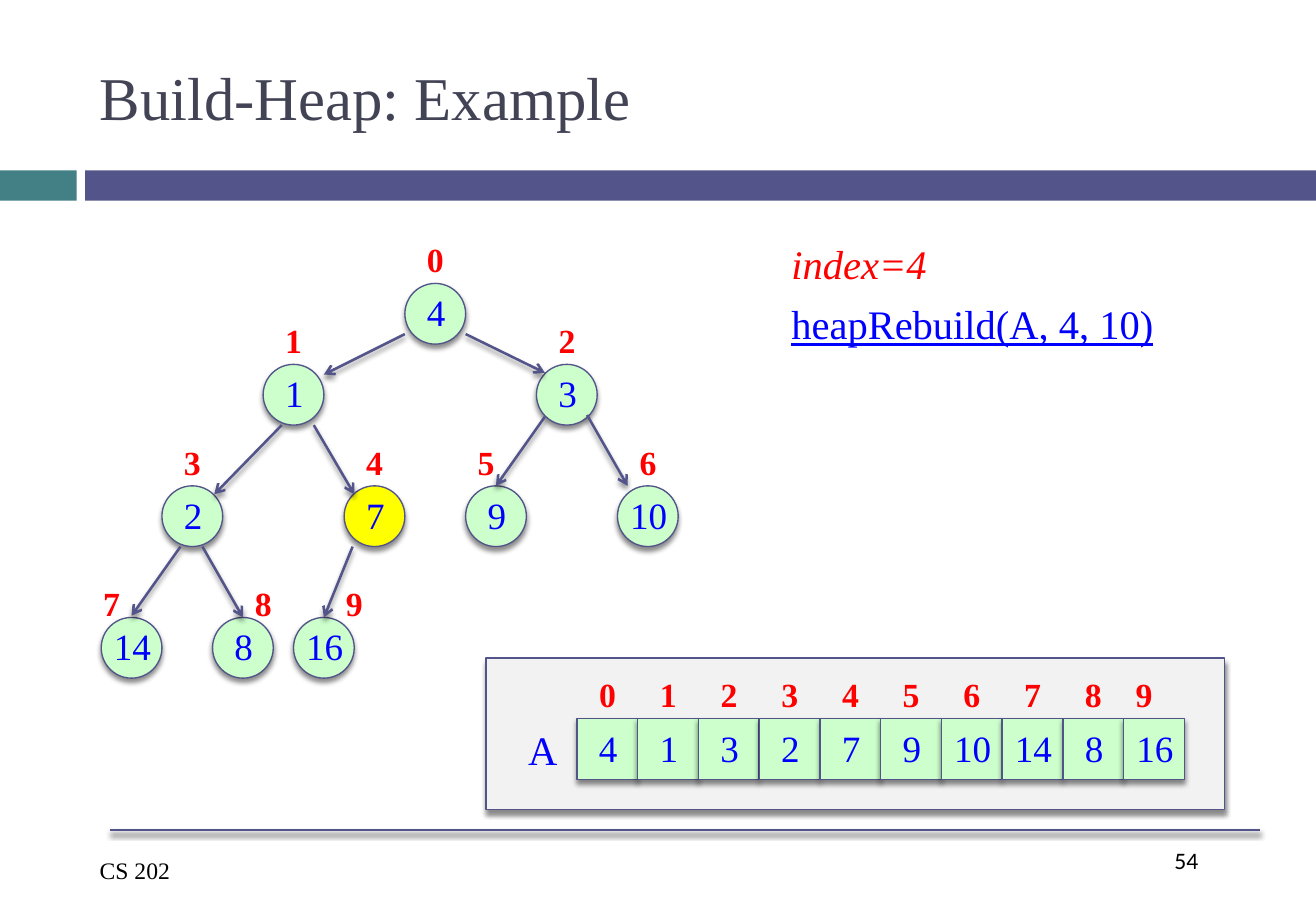
from pptx import Presentation
from pptx.dml.color import RGBColor
from pptx.enum.shapes import MSO_CONNECTOR, MSO_SHAPE
from pptx.enum.text import MSO_ANCHOR, PP_ALIGN
from pptx.oxml import parse_xml
from pptx.oxml.ns import nsdecls, qn
from pptx.util import Pt

SERIF = "Times New Roman"
INDIGO, TEAL, SLATE, GREY = "53548A", "438086", "424456", "F2F2F2"
GREEN, YELLOW, BLUE, RED, BLACK = "CCFFCC", "FFFF00", "0000FF", "FF0000", "000000"

VALUE = {"name": SERIF, "size": Pt(22)}
INDEX = {"name": SERIF, "size": Pt(20), "bold": True}
NOTE = {"name": SERIF, "size": Pt(24)}
TITLE = {"name": SERIF, "size": Pt(36)}
FOOTER = {"name": SERIF, "size": Pt(14)}
PAGE = {"name": "Calibri", "size": Pt(14)}

SIDE = 36
HEAP = [4, 1, 3, 2, 7, 9, 10, 14, 8, 16]
CURRENT = 4
NODES = [(180, 0), (96, 48), (258, 48), (36, 120), (144, 120),
         (216, 120), (306, 120), (0, 198), (66, 198), (114, 198)]
INDEX_OFFSETS = [(6, -30)] * 5 + [(0, -30), (6, -30), (-6, -24), (18, -24), (24, -24)]
EDGES = [(180, 30, 132, 54), (216, 30, 263, 53), (107, 84, 67, 125),
         (126, 84, 150, 125), (263, 79, 234, 120), (288, 78, 312, 120),
         (47, 156, 18, 197), (60, 156, 84, 198), (149, 156, 132, 198)]


def set_colour(fill, colour):
    fill.solid()
    fill.fore_color.rgb = RGBColor.from_string(colour)


def set_attributes(target, values):
    for name, value in values.items():
        setattr(target, name, value)


def cast_shadow(shape):
    shape._element.spPr.append(parse_xml(
        f'<a:effectLst {nsdecls("a")}>'
        '<a:outerShdw blurRad="38100" dist="30480" dir="5400000" rotWithShape="0">'
        '<a:srgbClr val="000000"><a:alpha val="45000"/></a:srgbClr>'
        '</a:outerShdw></a:effectLst>'))


def write(shape, text, style, colour):
    run = shape.text_frame.paragraphs[0].add_run()
    run.text = text
    set_attributes(run.font, style)
    set_colour(run.font.fill, colour)


def add_text(slide, box, text, style, colour, **frame):
    shape = slide.shapes.add_textbox(*map(Pt, box))
    set_attributes(shape.text_frame, {"word_wrap": True, **frame})
    write(shape, text, style, colour)


def add_index(slide, left, top, index):
    add_text(slide, (left, top, 24.5, 32), str(index), INDEX, RED, word_wrap=False)


def add_bar(slide, box, colour):
    bar = slide.shapes.add_shape(MSO_SHAPE.RECTANGLE, *map(Pt, box))
    set_colour(bar.fill, colour)
    bar.line.fill.background()
    bar.shadow.inherit = False


def add_raised(slide, kind, box, colour):
    shape = slide.shapes.add_shape(kind, *map(Pt, box))
    set_colour(shape.fill, colour)
    set_colour(shape.line.fill, INDIGO)
    shape.line.width = Pt(0.79)
    cast_shadow(shape)
    return shape


def add_value(slide, kind, left, top, value, colour=GREEN):
    shape = add_raised(slide, kind, (left, top, SIDE, SIDE), colour)
    set_attributes(shape.text_frame, {
        "margin_left": Pt(1), "margin_right": 0, "margin_top": 0, "margin_bottom": Pt(2),
        "word_wrap": False, "vertical_anchor": MSO_ANCHOR.MIDDLE})
    shape.text_frame.paragraphs[0].alignment = PP_ALIGN.CENTER
    write(shape, str(value), VALUE, BLUE)


def add_line(slide, ends, arrow=False):
    line = slide.shapes.add_connector(MSO_CONNECTOR.STRAIGHT, *map(Pt, ends))
    set_colour(line.line.fill, INDIGO)
    line.line.width = Pt(1.5)
    if arrow:
        outline = line._element.spPr.find(qn("a:ln"))
        outline.append(parse_xml(f'<a:tailEnd {nsdecls("a")} type="arrow"/>'))
    cast_shadow(line)


def add_frame(slide, width, height):
    add_bar(slide, (0, 101, 45.5, 18), TEAL)
    add_bar(slide, (50.5, 101, width - 50.5, 18), INDIGO)
    add_text(slide, (52, 18, 696, 78), "Build-Heap: Example", TITLE, SLATE,
             vertical_anchor=MSO_ANCHOR.MIDDLE)
    add_line(slide, (65, height - 48, width - 33, height - 48))
    add_text(slide, (52, height - 36, 143, 24.5), "CS 202", FOOTER, BLACK)
    add_text(slide, (689, height - 42, 58, 36), "54", PAGE, BLACK)


def add_tree(slide, left, top):
    for index, (value, (x, y)) in enumerate(zip(HEAP, NODES)):
        colour = YELLOW if index == CURRENT else GREEN
        add_value(slide, MSO_SHAPE.OVAL, left + x, top + y, value, colour)
    for x1, y1, x2, y2 in EDGES:
        add_line(slide, (left + x1, top + y1, left + x2, top + y2), arrow=True)
    for index, ((x, y), (dx, dy)) in enumerate(zip(NODES, INDEX_OFFSETS)):
        add_index(slide, left + x + dx, top + y + dy, index)


def add_array(slide, left, top, width, height):
    add_raised(slide, MSO_SHAPE.RECTANGLE, (left, top, width, height), GREY)
    add_text(slide, (left + 18, top + 36, 32, 36), "A", NOTE, BLUE, word_wrap=False)
    last = len(HEAP) - 1
    for index, value in enumerate(HEAP):
        x = left + 54 + index * SIDE
        add_value(slide, MSO_SHAPE.RECTANGLE, x, top + 36, value)
        add_index(slide, x if index == last else x + 6, top + 6, index)


def add_call(slide, left, top):
    add_text(slide, (left, top, 96, 36), "index=4", {**NOTE, "italic": True}, RED,
             word_wrap=False)
    add_text(slide, (left, top + 36, 231, 36), "heapRebuild(A, 4, 10)",
             {**NOTE, "underline": True}, BLUE, word_wrap=False)


def main():
    presentation = Presentation()
    presentation.slide_width, presentation.slide_height = Pt(780), Pt(540)
    slide = presentation.slides.add_slide(presentation.slide_layouts[6])
    add_frame(slide, 780, 540)
    add_tree(slide, 60, 168)
    add_array(slide, 288, 390, 438, 90)
    add_call(slide, 462, 138)
    presentation.save("out.pptx")


if __name__ == "__main__":
    main()
